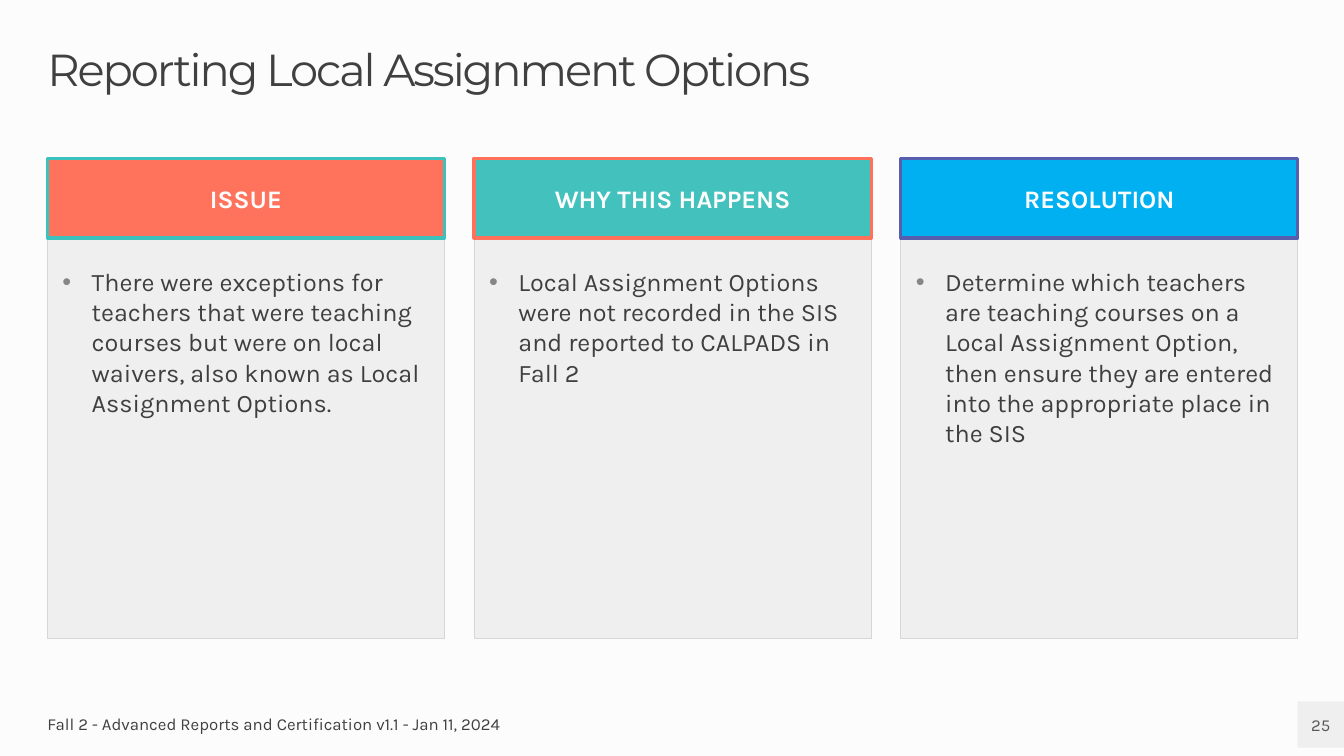
from dataclasses import dataclass

from lxml import etree
from pptx import Presentation
from pptx.dml.color import RGBColor
from pptx.enum.shapes import MSO_SHAPE
from pptx.enum.text import MSO_ANCHOR, MSO_AUTO_SIZE, PP_ALIGN
from pptx.oxml.ns import qn
from pptx.util import Pt

RECT = MSO_SHAPE.RECTANGLE
TOP, MIDDLE = MSO_ANCHOR.TOP, MSO_ANCHOR.MIDDLE
LEFT, CENTER = PP_ALIGN.LEFT, PP_ALIGN.CENTER
NO_FIT = MSO_AUTO_SIZE.NONE


@dataclass(frozen=True)
class Theme:
    heading_font: str = "Montserrat"
    body_font: str = "Karla"
    background: str = "FCFCFC"
    panel: str = "EFEFEF"
    panel_line: str = "D6D6D6"
    title: str = "404040"
    text: str = "3F3F3F"
    page_number: str = "595959"
    title_size: float = 32
    body_size: float = 18
    footer_size: float = 12


@dataclass(frozen=True)
class Box:
    left: float
    top: float
    width: float
    height: float


@dataclass(frozen=True)
class Column:
    heading: str
    body: str
    fill: str
    line: str


THEME = Theme()
SLIDE_W, SLIDE_H = 960, 540
MARGIN = 33.84
COLUMN_W, COLUMN_STEP = 283.68, 304.8
HEADER_TOP, HEADER_H, PANEL_H = 113, 57, 285.8
FOOTER_TOP = 501

COLUMNS = [
    Column("ISSUE",
           "There were exceptions for teachers that were teaching courses but were "
           "on local waivers, also known as Local Assignment Options.",
           "FF735D", "3DC1BD"),
    Column("WHY THIS HAPPENS",
           "Local Assignment Options were not recorded in the SIS and reported to "
           "CALPADS in Fall 2",
           "42C1BD", "FF715B"),
    Column("RESOLUTION",
           "Determine which teachers are teaching courses on a Local Assignment "
           "Option, then ensure they are entered into the appropriate place in the SIS",
           "00B0F0", "555FAD"),
]


def rgb(value: str) -> RGBColor:
    return RGBColor.from_string(value)


def place(sp, box: Box) -> None:
    sp.left, sp.top = Pt(box.left), Pt(box.top)
    sp.width, sp.height = Pt(box.width), Pt(box.height)


def add_rect(s, box: Box, fill: str, line: str | None = None, weight: float = 0):
    sp = s.shapes.add_shape(RECT, 0, 0, 0, 0)
    place(sp, box)
    sp.shadow.inherit = False
    sp.fill.solid()
    sp.fill.fore_color.rgb = rgb(fill)
    if line:
        sp.line.color.rgb = rgb(line)
        sp.line.width = Pt(weight)
    else:
        sp.line.fill.background()
    return sp


def write(sp, text: str, size: float, color: str, font: str = THEME.body_font,
          align=LEFT, anchor=MIDDLE, bold: bool = False,
          insets: tuple[float, float] = (0, 0), bottom: float = 0):
    tf = sp.text_frame
    tf.word_wrap = True
    tf.auto_size = NO_FIT
    tf.vertical_anchor = anchor
    tf.margin_left = tf.margin_right = Pt(insets[0])
    tf.margin_top, tf.margin_bottom = Pt(insets[1]), Pt(bottom)
    p = tf.paragraphs[0]
    p.alignment = align
    r = p.add_run()
    r.text = text
    r.font.name = font
    r.font.size = Pt(size)
    r.font.bold = bold
    r.font.color.rgb = rgb(color)
    return p


def add_bullet(p, indent: float) -> None:
    pPr = p._p.get_or_add_pPr()
    pPr.set("marL", str(Pt(indent)))
    pPr.set("indent", str(-Pt(indent)))
    clr = etree.SubElement(etree.SubElement(pPr, qn("a:buClr")), qn("a:srgbClr"))
    clr.set("val", THEME.title)
    etree.SubElement(clr, qn("a:alpha")).set("val", "60000")
    etree.SubElement(pPr, qn("a:buFont")).set("typeface", "Arial")
    etree.SubElement(pPr, qn("a:buChar")).set("char", "•")


def add_title(s, text: str) -> None:
    sp = s.shapes.title
    place(sp, Box(MARGIN, 33.84, 892.8, 33.84))
    p = write(sp, text, THEME.title_size, THEME.title, THEME.heading_font, anchor=TOP)
    p.line_spacing = 0.9
    p.runs[0]._r.get_or_add_rPr().set("spc", "-150")


def add_column(s, index: int, column: Column) -> None:
    left = MARGIN + index * COLUMN_STEP
    panel = add_rect(s, Box(left, HEADER_TOP + HEADER_H, COLUMN_W, PANEL_H),
                     THEME.panel, THEME.panel_line, 0.75)
    p = write(panel, column.body, THEME.body_size, THEME.text, anchor=TOP,
              insets=(10.8, 20.16))
    add_bullet(p, 20.88)
    header = add_rect(s, Box(left, HEADER_TOP, COLUMN_W, HEADER_H),
                      column.fill, column.line, 2.25)
    write(header, column.heading, THEME.body_size, THEME.background, align=CENTER,
          bold=True, insets=(8.64, 2.88), bottom=2.88)


def add_footer(s, text: str, number: str) -> None:
    sp = s.shapes.add_textbox(0, 0, 0, 0)
    place(sp, Box(MARGIN, FOOTER_TOP, 430.56, 32.4))
    write(sp, text, THEME.footer_size, THEME.title)
    badge = add_rect(s, Box(926.64, FOOTER_TOP, 33.36, 33.12), THEME.panel)
    write(badge, number, THEME.footer_size, THEME.page_number, align=CENTER)


def main() -> None:
    prs = Presentation()
    prs.slide_width, prs.slide_height = Pt(SLIDE_W), Pt(SLIDE_H)
    s = prs.slides.add_slide(prs.slide_layouts.get_by_name("Title Only"))
    s.background.fill.solid()
    s.background.fill.fore_color.rgb = rgb(THEME.background)
    add_title(s, "Reporting Local Assignment Options")
    for index, column in enumerate(COLUMNS):
        add_column(s, index, column)
    add_footer(s, "Fall 2 - Advanced Reports and Certification v1.1 - Jan 11, 2024", "25")
    prs.save("out.pptx")


if __name__ == "__main__":
    main()
